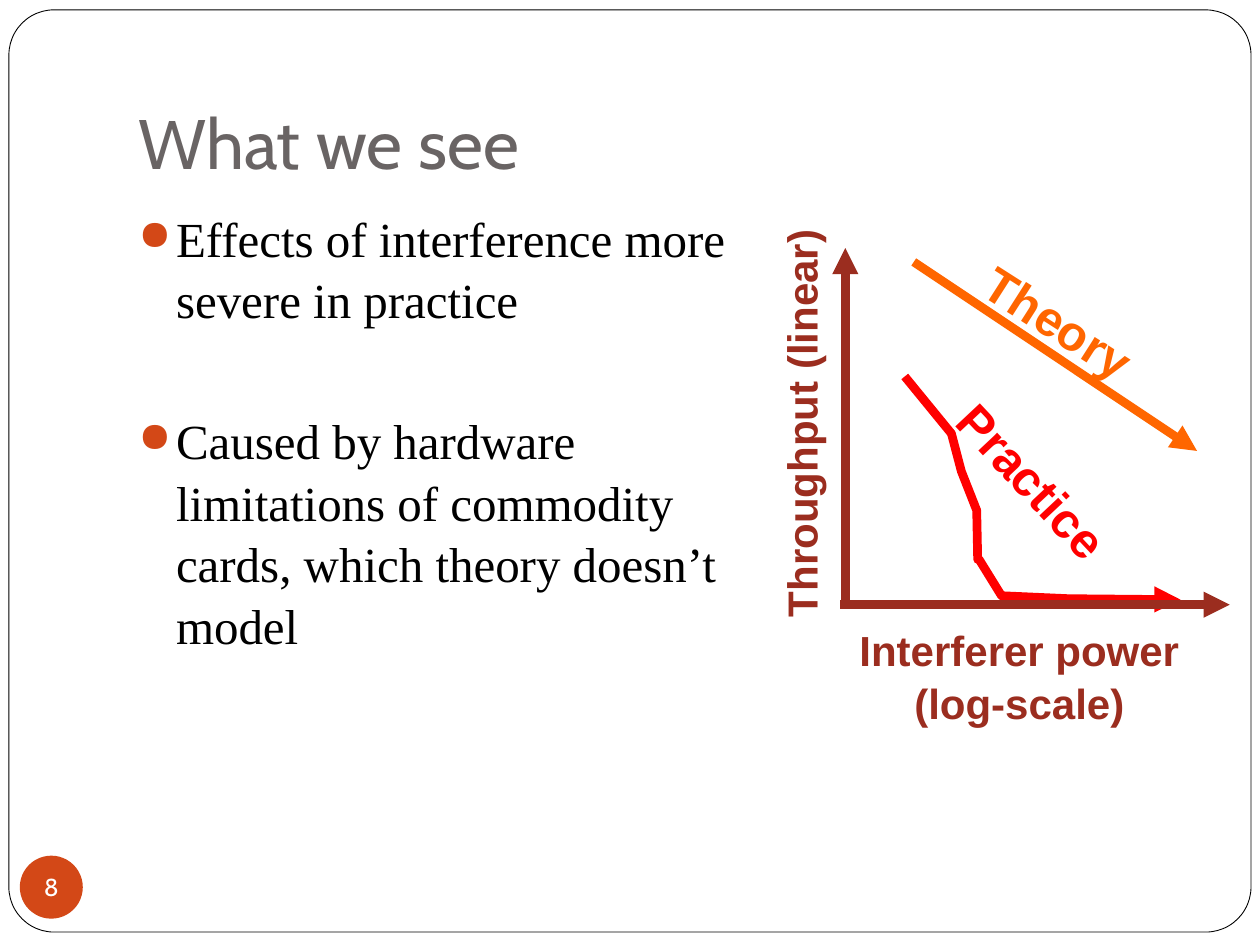
from lxml import etree
from pptx import Presentation
from pptx.dml.color import RGBColor
from pptx.enum.shapes import MSO_CONNECTOR, MSO_SHAPE
from pptx.enum.text import MSO_ANCHOR as Anchor, MSO_AUTO_SIZE as AutoSize, PP_ALIGN as Align
from pptx.oxml.ns import qn
from pptx.util import Cm, Pt

ACCENT, AXIS, THEORY, PRACTICE = "D34817", "9B2D1F", "FF6600", "FF0000"


def rgb(hex_code):
    return RGBColor.from_string(hex_code)


def add(parent, tag, **attributes):
    child = etree.SubElement(parent, qn(tag))
    for key, value in attributes.items():
        child.set(key, str(value))
    return child


class Deck:
    """Holds the style and the current slide."""
    title_font, body_font, label_font = "Cabin", "Times New Roman", "Arial"
    stroke = Pt(5)

    def __init__(self):
        self.prs = Presentation()
        self.prs.slide_width, self.prs.slide_height = Cm(25.4), Cm(19.05)
        self.slide = self.prs.slides.add_slide(self.prs.slide_layouts[6])

    def format(self, frame, font, size, color, bold=False, align=Align.LEFT):
        for paragraph in frame.paragraphs:
            paragraph.alignment = align
            for run in paragraph.runs:
                run.font.name, run.font.size, run.font.bold = font, Pt(size), bold
                run.font.color.rgb = rgb(color)

    def shape(self, preset, box, fill):
        shape = self.slide.shapes.add_shape(preset, *map(Cm, box))
        shape.shadow.inherit = False
        shape.fill.solid()
        shape.fill.fore_color.rgb = rgb(fill)
        shape.line.fill.background()
        return shape

    def frame(self, box):
        border = self.shape(MSO_SHAPE.ROUNDED_RECTANGLE, box, "FFFFFF")
        border.adjustments[0] = 0.049
        border.line.color.rgb = rgb("000000")
        border.line.width = Pt(0.5)

    def page_number(self, number, box):
        text = self.shape(MSO_SHAPE.OVAL, box, ACCENT).text_frame
        text.margin_left = text.margin_right = text.margin_top = text.margin_bottom = 0
        text.word_wrap = False
        text.vertical_anchor = Anchor.MIDDLE
        text.text = number
        self.format(text, self.title_font, 14, "FFFFFF", align=Align.CENTER)

    def text_box(self, text, box):
        area = self.slide.shapes.add_textbox(*map(Cm, box))
        area.text_frame.word_wrap = True
        area.text_frame.text = text
        return area

    def title(self, text, box):
        heading = self.text_box(text, box).text_frame
        heading.vertical_anchor = Anchor.BOTTOM
        heading.margin_bottom = Cm(0.25)
        self.format(heading, self.title_font, 40, "696464")

    def bullets(self, points, box):
        body = self.text_box("\n".join(points), box).text_frame
        self.format(body, self.body_font, 28, "000000")
        for index, paragraph in enumerate(body.paragraphs):
            paragraph.space_before = Pt(45 if index else 5.8)
            paragraph.line_spacing = 1.05
            properties = paragraph._p.get_or_add_pPr()
            properties.set("marL", str(Cm(0.76)))
            properties.set("indent", str(-Cm(0.76)))
            add(add(properties, "a:buClr"), "a:srgbClr", val=ACCENT)
            add(properties, "a:buSzPct", val=85000)
            add(properties, "a:buChar", char="●")

    def label(self, text, box, size, color, rotation=0, align=Align.LEFT):
        caption = self.text_box(text, box)
        caption.rotation = rotation
        caption.text_frame.word_wrap = False
        caption.text_frame.auto_size = AutoSize.SHAPE_TO_FIT_TEXT
        self.format(caption.text_frame, self.label_font, size, color, True, align)
        for paragraph in caption.text_frame.paragraphs:
            paragraph.line_spacing = 1.05

    def point(self, line, color):
        """Style a line and put an arrowhead at its end."""
        line.color.rgb = rgb(color)
        line.width = self.stroke
        add(line._get_or_add_ln(), "a:tailEnd", type="triangle")

    def arrow(self, start, end, color):
        connector = self.slide.shapes.add_connector(
            MSO_CONNECTOR.STRAIGHT, *map(Cm, start + end))
        self.point(connector.line, color)
        add(connector._element.spPr, "a:effectLst")

    def curve(self, points, color):
        start, *rest = [(Cm(x), Cm(y)) for x, y in points]
        builder = self.slide.shapes.build_freeform(*start)
        builder.add_line_segments(rest, close=False)
        path = builder.convert_to_shape()
        path.shadow.inherit = False
        path.fill.background()
        self.point(path.line, color)


def main():
    deck = Deck()
    deck.frame((0.18, 0.2, 25.04, 18.59))
    deck.title("What we see", (2.54, 0.76, 21.59, 3.18))
    deck.page_number("8", (0.4, 17.25, 1.27, 1.27))
    deck.bullets(["Effects of interference more severe in practice",
                  "Caused by hardware limitations of commodity cards, "
                  "which theory doesn’t model"], (2.54, 4.01, 12.5, 12.7))

    deck.curve([(18.24, 7.59), (19.18, 8.74), (19.38, 9.5), (19.69, 10.29), (19.71, 11.28),
                (19.74, 11.28), (20.19, 12.01), (21.54, 12.07), (23.8, 12.09)], PRACTICE)
    deck.label("Practice", (18.69, 8.94, 4.37, 1.45), 28, PRACTICE, 46.9)

    deck.arrow((17.04, 12.19), (17.04, 5), AXIS)
    deck.arrow((16.94, 12.19), (24.79, 12.19), AXIS)
    deck.label("Interferer power\n(log-scale)", (17.07, 12.42, 6.96, 2.29), 24, AXIS,
               align=Align.CENTER)
    deck.label("Throughput (linear)", (11.94, 7.9, 8.31, 1.27), 24, AXIS, 270)

    deck.arrow((18.42, 5.28), (24.13, 9.09), THEORY)
    deck.label("Theory", (19.48, 5.72, 3.81, 1.45), 28, THEORY, 32.6)
    deck.prs.save("out.pptx")


if __name__ == "__main__":
    main()
